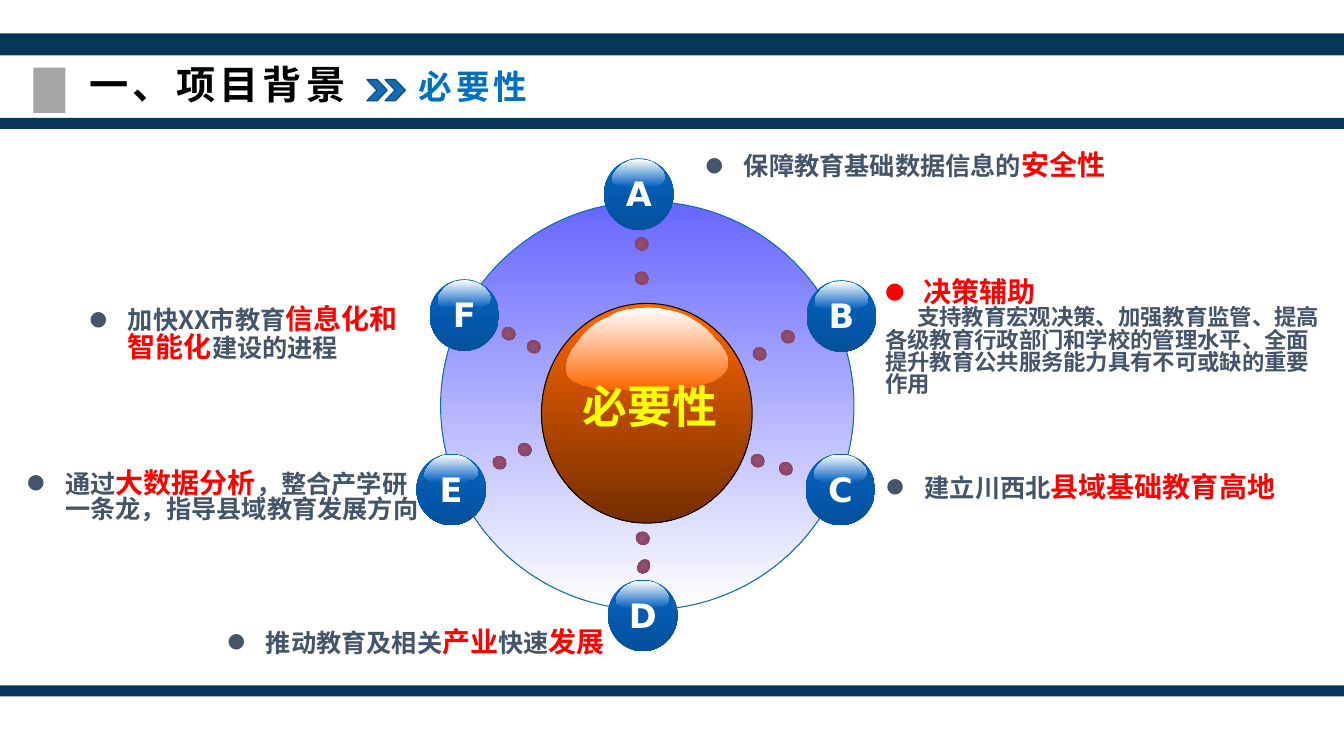
from lxml import etree
from pptx import Presentation
from pptx import util as u
from pptx.dml.color import RGBColor
from pptx.enum import shapes, text
from pptx.oxml.ns import qn

PX = 9144  # one px is a hundredth of an inch
CJK, LATIN = "Noto Sans CJK SC", "DejaVu Sans"
COLORS = {
    "navy": "083659", "grey": "767171", "blue": "116CB2", "edge": "0D5084",
    "heading": "0070C0", "slate": "44546A", "red": "FF0000", "black": "000000",
    "white": "FFFFFF", "yellow": "FFFF00", "violet": "6666FF",
    "orange": "FF6600", "rust": "742E00", "badge": "0563C1",
    "badge_low": "04519D", "plum": "954F72", "plum_edge": "7D4260",
}
# Outline of the highlight on every ball, in a field of 161 by 82
GLOSS_FIELD = (161, 82)
GLOSS = [
    (159, 46), (161, 51), (161, 56), (160, 60), (158, 64), (155, 67), (151, 70),
    (146, 73), (140, 75), (133, 77), (126, 79), (118, 80), (109, 81), (101, 82),
    (58, 82), (50, 82), (43, 81), (36, 81), (29, 80), (23, 78), (17, 77),
    (13, 75), (8, 73), (5, 70), (2, 67), (1, 64), (0, 61), (1, 56), (2, 52),
    (6, 43), (12, 35), (18, 27), (25, 20), (33, 14), (42, 10), (51, 5), (61, 2),
    (71, 1), (82, 0), (93, 1), (103, 3), (114, 6), (123, 10), (132, 16),
    (140, 22), (147, 30), (154, 38),
]
BADGES = [("B", 800, 278), ("A", 599, 157), ("F", 426, 277),
          ("E", 413, 450), ("D", 603, 575), ("C", 799, 450)]
DOTS = [(489, 452), (514, 439), (631, 527), (745, 450), (773, 458), (747, 344),
        (775, 327), (630, 269), (630, 235), (523, 337), (498, 324)]


def rgb(name):
    return RGBColor.from_string(COLORS[name])


def paint(shape, fill, line=None, weight=0.75):
    """Fill with one colour, or with a top and a bottom colour."""
    shape.shadow.inherit = False
    if isinstance(fill, tuple):
        shape.fill.gradient()
        shape.fill.gradient_angle = 270
        for stop, name in zip(shape.fill.gradient_stops, fill):
            stop.color.rgb = rgb(name)
        shape.fill.gradient_stops[0].position = 0
        shape.fill.gradient_stops[1].position = 1
    else:
        shape.fill.solid()
        shape.fill.fore_color.rgb = rgb(fill)
    if line:
        shape.line.color.rgb = rgb(line)
        shape.line.width = u.Pt(weight)
    else:
        shape.line.fill.background()


def add_figure(slide, kind, box, fill, line=None, weight=0.75):
    figure = slide.shapes.add_shape(kind, *(n * PX for n in box))
    paint(figure, fill, line, weight)
    return figure


def add_gloss(slide, box, low_color):
    left, top, width, height = box
    scale = (width * PX / GLOSS_FIELD[0], height * PX / GLOSS_FIELD[1])
    outline = slide.shapes.build_freeform(*GLOSS[0], scale=scale)
    outline.add_line_segments(GLOSS[1:], close=True)
    paint(outline.convert_to_shape(left * PX, top * PX), ("white", low_color))


def add_dot(slide, left, top, width=13, height=14):
    dot = add_figure(slide, shapes.MSO_SHAPE.OVAL, (left, top, width, height),
                     ("plum", "plum_edge"))
    dot.rotation = 303.8
    # Radial gradient from the centre
    gradient = dot._element.spPr.find(qn("a:gradFill"))
    linear = gradient.find(qn("a:lin"))
    radial = etree.SubElement(gradient, qn("a:path"), path="shape")
    etree.SubElement(radial, qn("a:fillToRect"),
                     {side: "50000" for side in "ltrb"})
    gradient.replace(linear, radial)


def add_text_box(slide, box, wrap=True, top_inset=7):
    frame = slide.shapes.add_textbox(*(n * PX for n in box)).text_frame
    frame.word_wrap = wrap
    frame.margin_top = top_inset * PX
    return frame


def add_run(paragraph, words, size, color, font=CJK, spacing=0):
    run = paragraph.add_run()
    run.text = words
    run.font.size = u.Pt(size)
    run.font.bold = True
    run.font.name = font
    run.font.color.rgb = rgb(color)
    properties = run._r.get_or_add_rPr()
    etree.SubElement(properties, qn("a:ea"), typeface=font)
    if spacing:
        properties.set("spc", str(spacing * 100))
    if font == CJK:
        paragraph.line_spacing = 0.83


def add_bullet(paragraph):
    properties = paragraph._p.get_or_add_pPr()
    properties.set("marL", str(38 * PX))
    properties.set("indent", str(-38 * PX))
    etree.SubElement(properties, qn("a:buSzPct"), val="80000")
    etree.SubElement(properties, qn("a:buFont"), typeface=LATIN)
    etree.SubElement(properties, qn("a:buChar"), char="●")


def add_point(slide, box, *parts, centered=False):
    """Bulleted line; parts alternate between plain and stressed."""
    frame = add_text_box(slide, box)
    point = frame.paragraphs[0]
    if centered:
        point.alignment = text.PP_ALIGN.CENTER
    for index, words in enumerate(parts):
        if words:
            size, color = (20, "red") if index % 2 else (18, "slate")
            add_run(point, words, size, color)
    add_bullet(point)
    return frame


def add_label(slide, box, words, size, color, font=CJK, spacing=0,
              centered=False, top_inset=7):
    frame = add_text_box(slide, box, top_inset=top_inset)
    label = frame.paragraphs[0]
    if centered:
        label.alignment = text.PP_ALIGN.CENTER
    add_run(label, words, size, color, font, spacing)


def add_badge(slide, letter, left, top):
    add_figure(slide, shapes.MSO_SHAPE.OVAL, (left, top, 69, 71),
               ("badge", "badge_low"))
    add_gloss(slide, (left + 8, top + 1, 53, 27), "badge")
    add_label(slide, (left, top + 10, 69, 50), letter, 24, "white", LATIN,
              centered=True, top_inset=5)


def add_header(slide):
    for top, height in ((117, 11), (33, 22), (680, 11)):
        add_figure(slide, shapes.MSO_SHAPE.RECTANGLE, (-6, top, 1345, height), "navy")
    marker = add_figure(slide, shapes.MSO_SHAPE.RECTANGLE, (33, 67, 32, 45), "grey")
    tint = marker._element.spPr.find(qn("a:solidFill"))[0]
    etree.SubElement(tint, qn("a:alpha"), val="64000")
    add_label(slide, (79, 61, 649, 57), "一、项目背景", 28, "black", spacing=3)
    add_label(slide, (405, 65, 521, 50), "必要性", 24, "heading", spacing=3)
    for left in (382, 364):
        add_figure(slide, shapes.MSO_SHAPE.CHEVRON, (left, 79, 20, 21),
                   "blue", "edge", 1)


def add_wheel(slide):
    add_figure(slide, shapes.MSO_SHAPE.OVAL, (437, 200, 410, 405),
               ("violet", "white"), "blue")
    add_figure(slide, shapes.MSO_SHAPE.OVAL, (537, 301, 209, 218),
               ("orange", "rust"), "black")
    add_gloss(slide, (561, 305, 161, 82), "orange")
    add_label(slide, (561, 378, 167, 64), "必要性", 32, "yellow", centered=True)
    for left, top in DOTS:
        add_dot(slide, left, top)
    add_dot(slide, 631, 556, 15, 12)
    for badge in BADGES:
        add_badge(slide, *badge)


def add_points(slide):
    add_point(slide, (680, 145, 436, 44), "保障教育基础数据信息的", "安全性", centered=True)
    decision = add_point(slide, (868, 271, 458, 151), "", "决策辅助")
    detail = decision.add_paragraph()
    add_run(detail, "支持教育宏观决策、加强教育监管、提高各级教育行政部门和学校的"
            "管理水平、全面提升教育公共服务能力具有不可或缺的重要作用", 16, "slate")
    detail._p.get_or_add_pPr().set("indent", str(32 * PX))
    add_point(slide, (869, 464, 406, 44), "建立川西北", "县域基础教育高地", centered=True)
    add_point(slide, (213, 618, 400, 44), "推动教育及相关", "产业", "快速", "发展",
              centered=True)
    add_point(slide, (17, 460, 409, 74), "通过", "大数据分析",
              "，整合产学研一条龙，指导县域教育发展方向")
    add_point(slide, (79, 298, 342, 77), "加快XX市教育", "信息化和智能化", "建设的进程")


def main():
    deck = Presentation()
    deck.slide_width, deck.slide_height = 1333 * PX, 750 * PX
    slide = deck.slides.add_slide(deck.slide_layouts[6])
    add_header(slide)
    add_wheel(slide)
    add_points(slide)
    deck.save("out.pptx")


if __name__ == "__main__":
    main()
